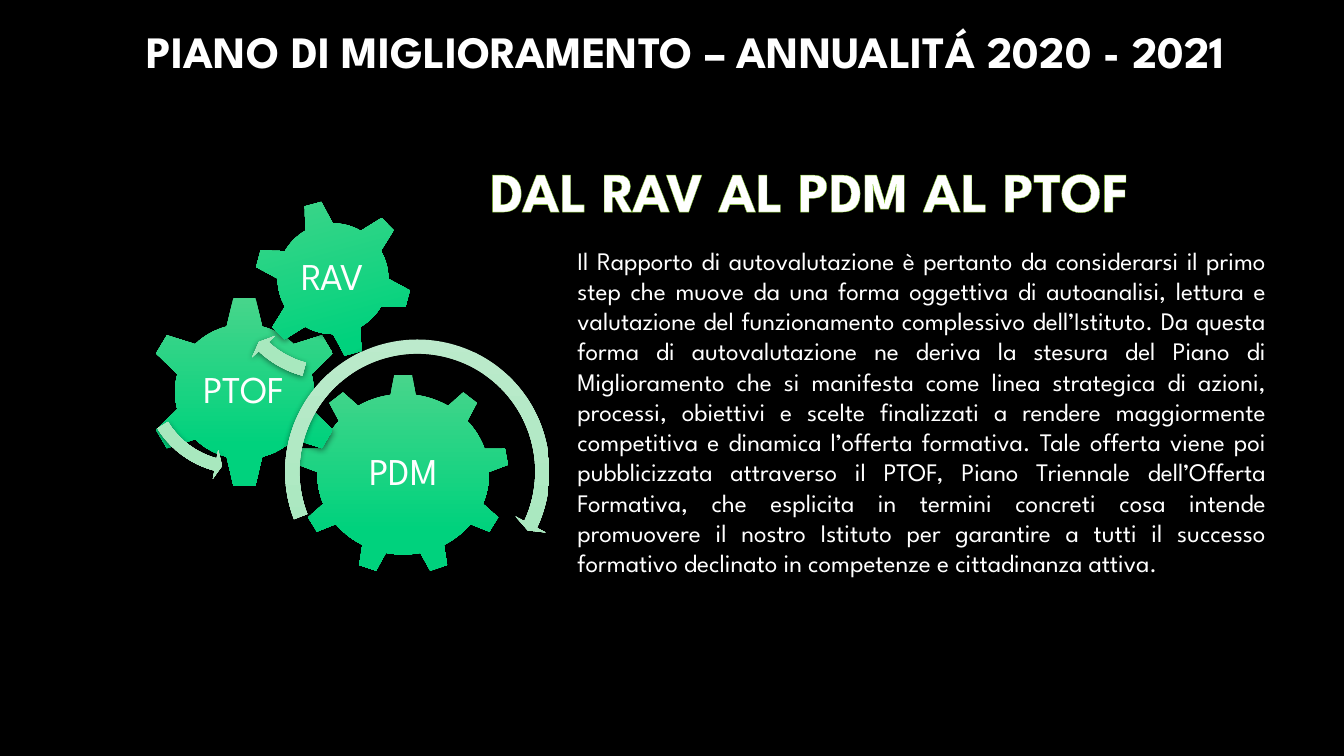
from lxml import etree
from pptx import Presentation
from pptx.dml.color import RGBColor
from pptx.enum.shapes import MSO_SHAPE
from pptx.enum.text import MSO_ANCHOR, MSO_AUTO_SIZE, PP_ALIGN
from pptx.oxml import parse_xml
from pptx.oxml.ns import qn
from pptx.util import Pt

GEAR6, GEAR9 = MSO_SHAPE.GEAR_6, MSO_SHAPE.GEAR_9
ARROW, LEFT_ARROW = MSO_SHAPE.CIRCULAR_ARROW, MSO_SHAPE.LEFT_CIRCULAR_ARROW
CENTER, RIGHT, JUSTIFY = PP_ALIGN.CENTER, PP_ALIGN.RIGHT, PP_ALIGN.JUSTIFY
TOP, MIDDLE = MSO_ANCHOR.TOP, MSO_ANCHOR.MIDDLE
NO_AUTOFIT = MSO_AUTO_SIZE.NONE

FONT = "League Spartan"
WHITE = "FFFFFF"
GEAR_FILL = ("48D58B", "00D27D")
ARROW_FILL = ("BCEACC", "A8E8BE")
DRAWING_NS = "http://schemas.openxmlformats.org/drawingml/2006/main"

GEARS = [
    ("PDM", GEAR9, (212.4, 267.1, 151.2, 143.3), 0, (242.6, 301, 91.4, 73.4)),
    ("PTOF", GEAR6, (104.4, 211, 140.4, 137.5), 0, (139.7, 245.5, 69.8, 67.7)),
    ("RAV", GEAR6, (181.4, 142.6, 113, 113), 345, (205.9, 167, 63.4, 63.4)),
]
ARROWS = [
    (ARROW, (196.6, 235.4, 203, 203), (0.05, 2.99, 25.02, 158.92, 0.06)),
    (LEFT_ARROW, (96.5, 196.6, 147.6, 147.6), (0.06, 4.3, 104.89, 148.38, 0.07)),
    (ARROW, (155.5, 118.1, 159.1, 159.1), (0.06, 3.94, 133.14, 105.08, 0.07)),
]
HEADING = "PIANO DI MIGLIORAMENTO – ANNUALITÁ 2020 - 2021"
TITLE = "DAL RAV AL PDM AL PTOF"
REPORT = (
    "Il Rapporto di autovalutazione è pertanto da considerarsi il primo step che "
    "muove da una forma oggettiva di autoanalisi, lettura e valutazione del "
    "funzionamento complessivo dell’Istituto. Da questa forma di autovalutazione "
    "ne deriva la stesura del Piano di Miglioramento che si manifesta come linea "
    "strategica di azioni, processi, obiettivi e scelte finalizzati a rendere "
    "maggiormente competitiva e dinamica l’offerta formativa. Tale offerta viene "
    "poi pubblicizzata attraverso il PTOF, Piano Triennale dell’Offerta Formativa, "
    "che esplicita in termini concreti cosa intende promuovere il nostro Istituto "
    "per garantire a tutti il successo formativo declinato in competenze e "
    "cittadinanza attiva."
)


def color(hex_code):
    return RGBColor.from_string(hex_code)


def points(box):
    return [Pt(length) for length in box]


def write(holder, text, size, align=CENTER, anchor=MIDDLE, bold=False,
          spacing=0.9, inset=None):
    frame = holder.text_frame
    frame.word_wrap = True
    frame.auto_size = NO_AUTOFIT
    frame.vertical_anchor = anchor
    if inset is not None:
        frame.margin_left = frame.margin_right = Pt(inset)
        frame.margin_top = frame.margin_bottom = Pt(inset)
    paragraph = frame.paragraphs[0]
    paragraph.alignment = align
    paragraph.line_spacing = spacing
    paragraph.space_before = Pt(0)
    run = paragraph.add_run()
    run.text = text
    run.font.name = FONT
    run.font.size = Pt(size)
    run.font.bold = bold
    run.font.color.rgb = color(WHITE)
    return run


def add_text(slide, box, text, size, **formatting):
    return write(slide.shapes.add_textbox(*points(box)), text, size, **formatting)


def outline_text(run, hex_code, width):
    run._r.get_or_add_rPr().insert(0, parse_xml(
        f'<a:ln xmlns:a="{DRAWING_NS}" w="{int(Pt(width))}"><a:solidFill>'
        f'<a:srgbClr val="{hex_code}"/></a:solidFill></a:ln>'))


def add_shadow(shape):
    shape.shadow.inherit = False
    effects = shape._element.spPr.find(qn("a:effectLst"))
    shadow = etree.SubElement(
        effects, qn("a:outerShdw"), blurRad=str(int(Pt(4.5))),
        dist=str(int(Pt(1.5))), dir="5400000", algn="ctr", rotWithShape="0")
    tint = etree.SubElement(shadow, qn("a:srgbClr"), val="000000")
    etree.SubElement(tint, qn("a:alpha"), val="48000")


def add_gradient_shape(slide, preset, box, colors):
    shape = slide.shapes.add_shape(preset, *points(box))
    shape.line.fill.background()
    shape.fill.gradient()
    shape.fill.gradient_angle = 270
    for stop, hex_code, position in zip(shape.fill.gradient_stops, colors, (0, 0.78)):
        stop.color.rgb = color(hex_code)
        stop.position = position
    add_shadow(shape)
    return shape


def add_gear(slide, label, preset, box, rotation, label_box):
    gear = add_gradient_shape(slide, preset, box, GEAR_FILL)
    gear.rotation = rotation
    add_text(slide, label_box, label, 27, inset=2.9)


def add_arrow(slide, preset, box, adjustments):
    arrow = add_gradient_shape(slide, preset, box, ARROW_FILL)
    width, *angles, head = adjustments
    arrow.adjustments[0] = width
    for index, degrees in enumerate(angles, 1):
        arrow.adjustments[index] = degrees * 0.6
    arrow.adjustments[4] = head


def set_title(slide, box, text):
    title = slide.shapes.title
    title.left, title.top, title.width, title.height = points(box)
    run = write(title, text, 40, align=RIGHT, bold=True)
    outline_text(run, "84C72A", 0.52)


def main():
    presentation = Presentation()
    presentation.slide_width, presentation.slide_height = Pt(960), Pt(540)
    slide = presentation.slides.add_slide(presentation.slide_layouts[5])
    slide.background.fill.solid()
    slide.background.fill.fore_color.rgb = color("000000")

    set_title(slide, (286.6, 105.8, 527, 65.5), TITLE)
    for gear in GEARS:
        add_gear(slide, *gear)
    for arrow in ARROWS:
        add_arrow(slide, *arrow)
    add_text(slide, (405.4, 171.4, 506.2, 312.5), REPORT, 18,
             align=JUSTIFY, anchor=TOP, spacing=1.0)
    add_text(slide, (49.7, 11.5, 833, 54), HEADING, 32, align=RIGHT, bold=True)
    presentation.save("out.pptx")


if __name__ == "__main__":
    main()
